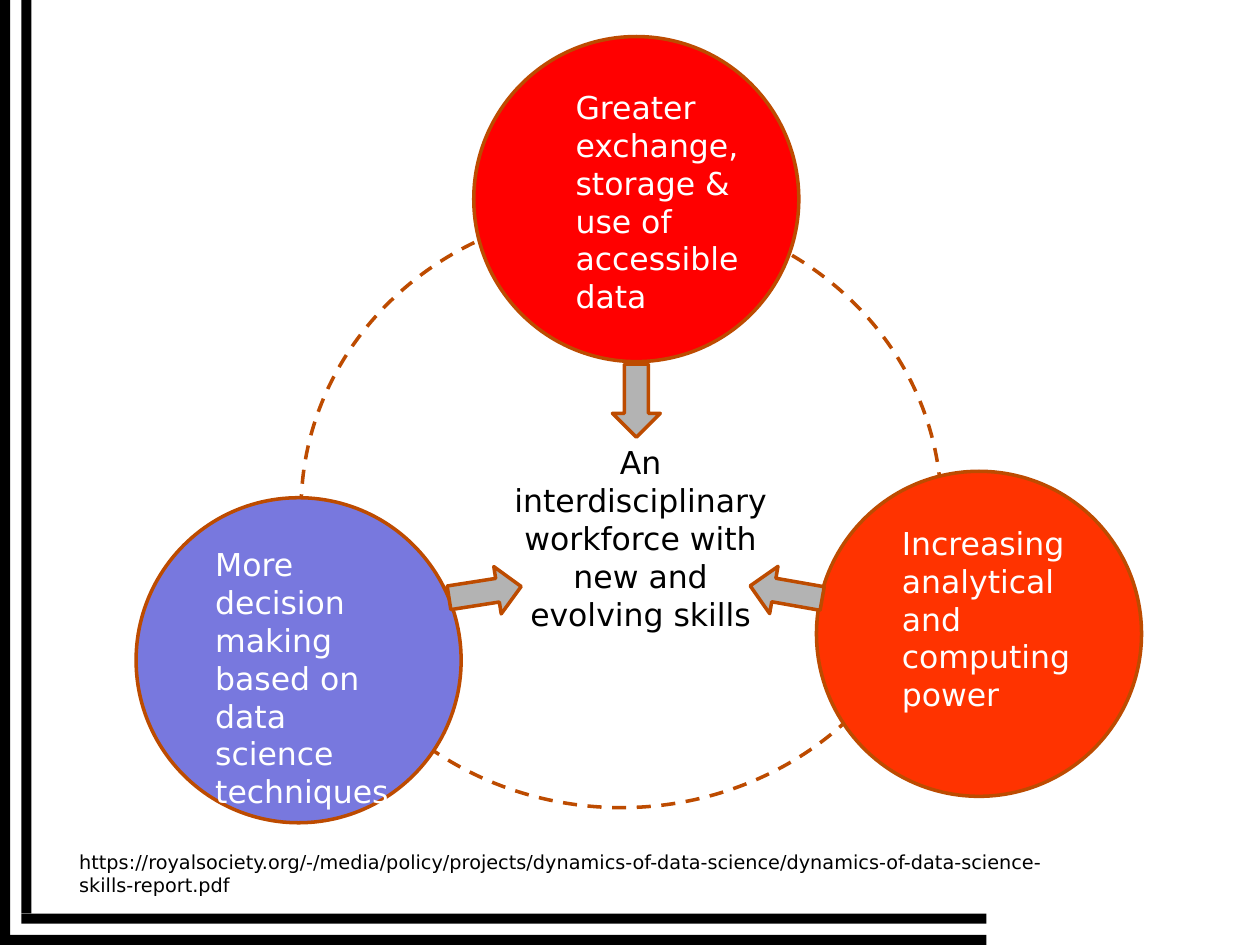
"""Build a slide showing three drivers of an interdisciplinary data science workforce."""
from pptx import Presentation, util as u
from pptx.dml.color import RGBColor
from pptx.enum import dml, shapes, text

PX = 9144
FONT = "DejaVu Sans"
COLORS = {
    "black": "000000", "white": "FFFFFF", "outline": "BD4B00", "arrow": "B3B3B3",
    "red": "FF0000", "orange": "FF3300", "violet": "7878DE",
}
FRAME_BARS = [(17, 725, 766, 8), (0, 742, 783, 8), (0, 0, 8, 750), (17, 0, 8, 725)]
ORBIT = (239, 166, 508, 475)
DIAMETER = 258
SIDE_DRIVERS = [
    ("Increasing analytical and computing power", "orange", (648, 374), (706, 411, 177, 162)),
    ("More decision making based on data science techniques", "violet", (108, 395), (161, 428, 177, 192)),
]
TOP_DRIVER = ("Greater exchange, storage & use of accessible data", "red", (376, 29), (447, 65, 177, 192))
OUTCOME = ("An interdisciplinary workforce with new and evolving skills", (392, 347, 233, 162))
SOURCE = (
    "https://royalsociety.org/-/media/policy/projects/dynamics-of-data-science/"
    "dynamics-of-data-science-skills-report.pdf",
    (53, 670, 788, 47),
)
ARROW_SIZE = (58, 38)
ARROWS = [((476, 299), 90), ((356, 451), 351.1), ((595, 451), 190)]


def color(name):
    return RGBColor.from_string(COLORS[name])


def scaled(box):
    return [value * PX for value in box]


def add_shape(slide, kind, box, fill=None, outline=True):
    shape = slide.shapes.add_shape(kind, *scaled(box))
    shape.shadow.inherit = False
    if fill:
        shape.fill.solid()
        shape.fill.fore_color.rgb = color(fill)
    else:
        shape.fill.background()
    if outline:
        shape.line.color.rgb = color("outline")
        shape.line.width = u.Pt(2)
    else:
        shape.line.fill.background()
    return shape


def add_text(slide, words, box, ink="black", size=18, align=text.PP_ALIGN.LEFT):
    frame = slide.shapes.add_textbox(*scaled(box)).text_frame
    frame.word_wrap = True
    frame.auto_size = text.MSO_AUTO_SIZE.SHAPE_TO_FIT_TEXT
    paragraph = frame.paragraphs[0]
    paragraph.alignment = align
    run = paragraph.add_run()
    run.text = words
    run.font.name = FONT
    run.font.size = u.Pt(size)
    run.font.color.rgb = color(ink)


def add_driver(slide, words, fill, position, label_box):
    add_shape(slide, shapes.MSO_SHAPE.OVAL, position + (DIAMETER, DIAMETER), fill)
    add_text(slide, words, label_box, "white")


def main():
    presentation = Presentation()
    presentation.slide_width, presentation.slide_height = scaled((1000, 750))
    slide = presentation.slides.add_slide(presentation.slide_layouts[6])

    for bar in FRAME_BARS:
        add_shape(slide, shapes.MSO_SHAPE.RECTANGLE, bar, "black", outline=False)

    orbit = add_shape(slide, shapes.MSO_SHAPE.OVAL, ORBIT)
    orbit.line.dash_style = dml.MSO_LINE.DASH

    for driver in SIDE_DRIVERS:
        add_driver(slide, *driver)
    add_text(slide, *OUTCOME, align=text.PP_ALIGN.CENTER)

    for position, angle in ARROWS:
        arrow = add_shape(slide, shapes.MSO_SHAPE.RIGHT_ARROW, position + ARROW_SIZE, "arrow")
        arrow.rotation = angle

    add_driver(slide, *TOP_DRIVER)
    add_text(slide, *SOURCE, size=11)
    presentation.save("out.pptx")


if __name__ == "__main__":
    main()
